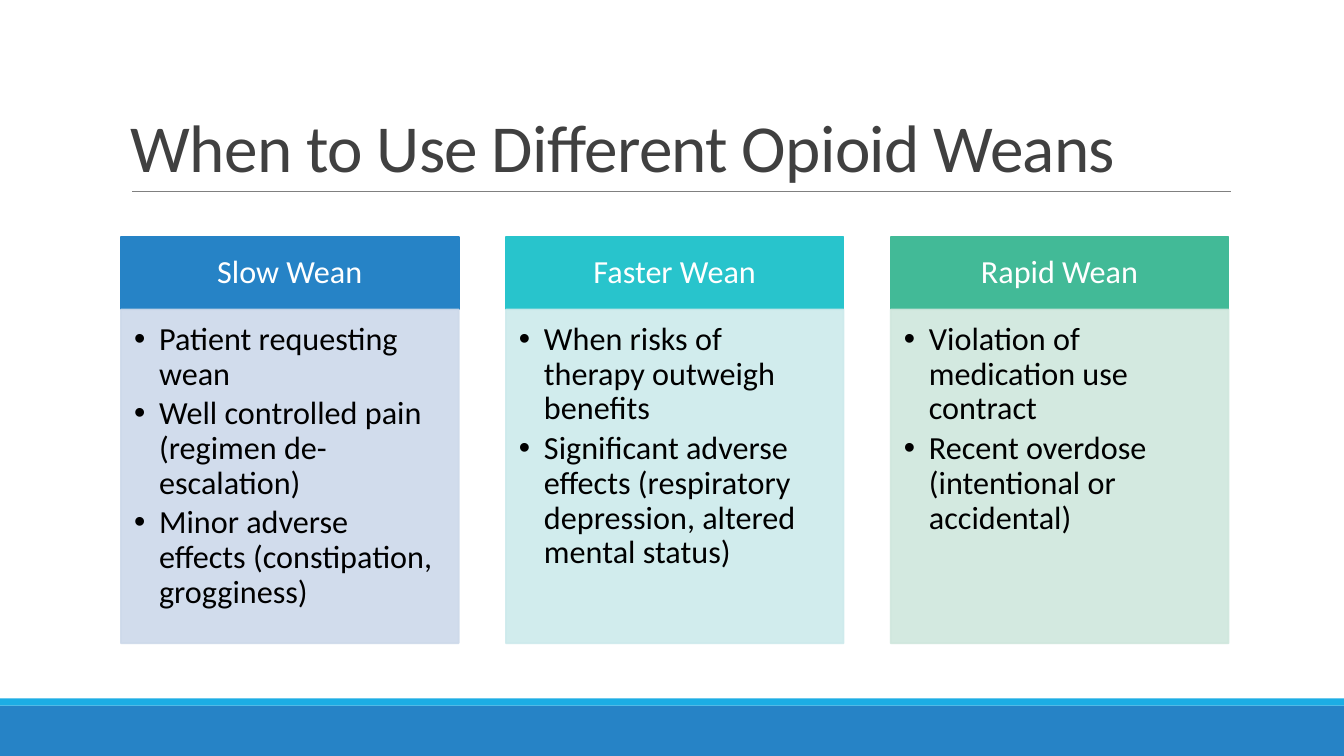
"""Build the slide on when to use different opioid weans."""
import pptx
import pptx.dml.color
import pptx.enum.shapes
import pptx.enum.text
import pptx.oxml.ns
import pptx.util
from lxml import etree

Cm = pptx.util.Cm
Pt = pptx.util.Pt
RGBColor = pptx.dml.color.RGBColor
PP_ALIGN = pptx.enum.text.PP_ALIGN
MSO_ANCHOR = pptx.enum.text.MSO_ANCHOR
qn = pptx.oxml.ns.qn

FONT = "Calibri"
WHITE = RGBColor(0xFF, 0xFF, 0xFF)
BLACK = RGBColor(0x00, 0x00, 0x00)
TITLE_GREY = RGBColor(0x40, 0x40, 0x40)
RULE_GREY = RGBColor(0x80, 0x80, 0x80)
BLUE = RGBColor(0x26, 0x83, 0xC6)
SKY = RGBColor(0x1C, 0xAD, 0xE4)
TEAL = RGBColor(0x28, 0xC4, 0xCC)
GREEN = RGBColor(0x42, 0xBA, 0x97)
PALE_BLUE = RGBColor(0xCD, 0xD9, 0xEA)
PALE_TEAL = RGBColor(0xCD, 0xEA, 0xEC)
PALE_GREEN = RGBColor(0xCF, 0xE7, 0xDD)

SLIDE_W, SLIDE_H = 33.87, 19.05
COL_LEFT, COL_STEP, COL_W = 3.05, 9.7, 8.51
HEAD_TOP, HEAD_H, BODY_H = 5.97, 1.83, 8.41

WEANS = [
    ("Slow Wean", BLUE, PALE_BLUE, [
        "Patient requesting wean",
        "Well controlled pain (regimen de-escalation)",
        "Minor adverse effects (constipation, grogginess)"]),
    ("Faster Wean", TEAL, PALE_TEAL, [
        "When risks of therapy outweigh benefits",
        "Significant adverse effects (respiratory depression, altered mental status)"]),
    ("Rapid Wean", GREEN, PALE_GREEN, [
        "Violation of medication use contract",
        "Recent overdose (intentional or accidental)"]),
]


def set_bullet(p):
    pPr = p._p.get_or_add_pPr()
    pPr.set("marL", str(Cm(0.63)))
    pPr.set("indent", str(-Cm(0.63)))
    etree.SubElement(pPr, qn("a:buFont")).set("typeface", "Arial")
    etree.SubElement(pPr, qn("a:buChar")).set("char", "•")


def set_text(sp, lines, *, size, color, align=PP_ALIGN.LEFT, anchor=MSO_ANCHOR.TOP,
             insets=(0.25, 0.13, 0.25, 0.13), spacing=0.9, after=0,
             tracking=0, bullets=False):
    tf = sp.text_frame
    tf.word_wrap = True
    tf.auto_size = pptx.enum.text.MSO_AUTO_SIZE.NONE
    tf.vertical_anchor = anchor
    tf.margin_left, tf.margin_top, tf.margin_right, tf.margin_bottom = map(Cm, insets)
    for i, line in enumerate(lines):
        p = tf.add_paragraph() if i else tf.paragraphs[0]
        p.alignment = align
        p.line_spacing = spacing
        p.space_before = Pt(0)
        p.space_after = Pt(after)
        if bullets:
            set_bullet(p)
        r = p.add_run()
        r.text = line
        r.font.name = FONT
        r.font.size = Pt(size)
        r.font.color.rgb = color
        if tracking:
            r._r.get_or_add_rPr().set("spc", str(int(tracking * 100)))


def set_opacity(fill_parent, percent):
    color = fill_parent.find(qn("a:solidFill"))[0]
    etree.SubElement(color, qn("a:alpha")).set("val", str(percent * 1000))


def add_box(s, left, top, width, height, color, outlined=False, opacity=100):
    sp = s.shapes.add_shape(pptx.enum.shapes.MSO_SHAPE.RECTANGLE,
                            Cm(left), Cm(top), Cm(width), Cm(height))
    sp.shadow.inherit = False
    sp.fill.solid()
    sp.fill.fore_color.rgb = color
    if outlined:
        sp.line.color.rgb = color
        sp.line.width = Pt(1.25)
    else:
        sp.line.fill.background()
    if opacity < 100:
        spPr = sp._element.spPr
        set_opacity(spPr, opacity)
        set_opacity(spPr.find(qn("a:ln")), opacity)
    return sp


def add_rule(s, left, right, y):
    line = s.shapes.add_connector(pptx.enum.shapes.MSO_CONNECTOR.STRAIGHT,
                                  Cm(left), Cm(y), Cm(right), Cm(y))
    line.line.color.rgb = RULE_GREY
    line.line.width = Pt(0.5)
    etree.SubElement(line._element.spPr, qn("a:effectLst"))


def add_title(s, text):
    sp = s.shapes.title
    sp.left, sp.top, sp.width, sp.height = Cm(3.05), Cm(0.79), Cm(27.94), Cm(4.04)
    set_text(sp, [text], size=48, color=TITLE_GREY, anchor=MSO_ANCHOR.BOTTOM,
             spacing=0.85, tracking=-0.5)


def add_wean(s, left, heading, color, pale, reasons):
    head = add_box(s, left, HEAD_TOP, COL_W, HEAD_H, color, outlined=True)
    set_text(head, [heading], size=23, color=WHITE, align=PP_ALIGN.CENTER,
             anchor=MSO_ANCHOR.MIDDLE, insets=(0.46, 0.25, 0.46, 0.25))
    body = add_box(s, left, HEAD_TOP + HEAD_H, COL_W, BODY_H, pale,
                   outlined=True, opacity=90)
    set_text(body, reasons, size=23, color=BLACK, insets=(0.33, 0.33, 0.46, 0.51),
             after=3.4, bullets=True)


def main():
    prs = pptx.Presentation()
    prs.slide_width, prs.slide_height = Cm(SLIDE_W), Cm(SLIDE_H)
    s = prs.slides.add_slide(prs.slide_layouts[5])
    add_box(s, 0, 17.78, SLIDE_W, 1.27, BLUE)
    add_box(s, 0, 17.6, SLIDE_W, 0.18, SKY)
    add_rule(s, 3.33, 31.01, 4.83)
    add_title(s, "When to Use Different Opioid Weans")
    for i, wean in enumerate(WEANS):
        add_wean(s, COL_LEFT + i * COL_STEP, *wean)
    prs.save("out.pptx")


if __name__ == "__main__":
    main()
